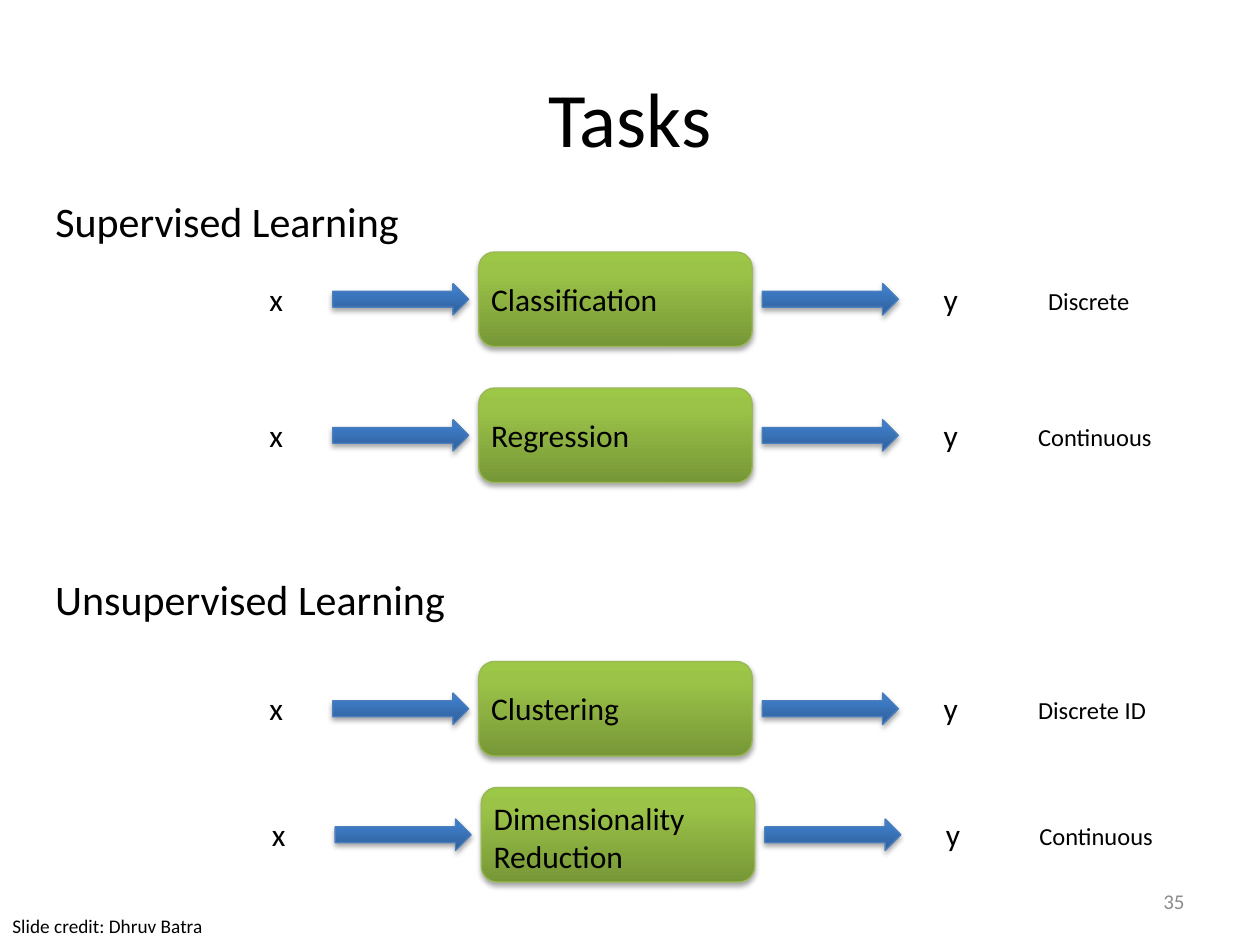
"""Build a slide of supervised and unsupervised learning tasks."""
from copy import deepcopy
from dataclasses import dataclass

from lxml import etree
from pptx import Presentation
from pptx import util as u
from pptx.dml.color import RGBColor
from pptx.enum import shapes, text
from pptx.oxml.ns import qn


@dataclass(frozen=True)
class Style:
    stops: tuple[tuple[float, str], ...]
    line: str


@dataclass(frozen=True)
class Task:
    name: str
    top: float
    output: str
    output_left: float
    output_width: float
    shift: float = 0
    label_drop: float = 0.17
    label_height: float = 0.4


@dataclass(frozen=True)
class Label:
    words: str
    left: float
    top: float
    width: float
    height: float
    size: int


GREEN = Style(((0, "779737"), (0.8, "9BC348"), (1, "9DC746")), "98B955")
BLUE = Style(((0, "2F5F99"), (0.8, "3D7CC7"), (1, "3A7CCB")), "4B7EBC")
ARROW = shapes.MSO_SHAPE.RIGHT_ARROW
ROUNDED = shapes.MSO_SHAPE.ROUNDED_RECTANGLE

TASKS = (
    Task("Classification", 2, "Discrete", 8.22, 0.92),
    Task("Regression", 3.08, "Continuous", 8.14, 1.2),
    Task("Clustering", 5.25, "Discrete ID", 8.14, 1.17),
    Task("Dimensionality\vReduction", 6.25, "Continuous", 8.15, 1.2,
         shift=0.02, label_drop=0.04, label_height=0.71),
)
LABELS = (
    Label("Supervised Learning", 0.34, 1.5, 3.29, 0.5, 24),
    Label("Unsupervised Learning", 0.34, 4.5, 3.66, 0.5, 24),
    Label("Slide credit: Dhruv Batra", 0, 7.21, 1.73, 0.29, 11),
)


def color(value: str) -> RGBColor:
    """Turn a hex string into a colour."""
    return RGBColor.from_string(value)


def inches(*lengths: float) -> list[u.Length]:
    """Turn numbers into lengths."""
    return [u.Inches(length) for length in lengths]


def set_all(target, values: dict) -> None:
    """Set each named attribute of the target."""
    for name, value in values.items():
        setattr(target, name, value)


def write(frame, words: str, size: int, align=text.PP_ALIGN.LEFT, ink: str = "000000") -> None:
    """Write one formatted paragraph into a text frame."""
    frame.text = words
    para = frame.paragraphs[0]
    para.alignment = align
    for span in para.runs:
        set_all(span.font, {"name": "Calibri", "size": u.Pt(size)})
        span.font.color.rgb = color(ink)


def add_label(page, label: Label, wrap: bool = False) -> None:
    """Add a text box that grows with its text."""
    box = page.shapes.add_textbox(*inches(label.left, label.top, label.width, label.height))
    set_all(box.text_frame, {"word_wrap": wrap,
                             "auto_size": text.MSO_AUTO_SIZE.SHAPE_TO_FIT_TEXT})
    write(box.text_frame, label.words, label.size)


def add_glossy(page, kind, place: tuple[float, float, float, float], style: Style) -> None:
    """Add a shape with a three-stop gradient and a soft shadow."""
    shape = page.shapes.add_shape(kind, *inches(*place))
    shape.fill.gradient()
    shape.fill.gradient_angle = 90
    properties = shape.element.spPr
    stop_list = properties.find(".//" + qn("a:gsLst"))
    stop_list.append(deepcopy(stop_list[0]))
    for stop, (position, value) in zip(shape.fill.gradient_stops, style.stops):
        stop.position = position
        stop.color.rgb = color(value)
    shape.line.color.rgb = color(style.line)
    shape.line.width = u.Pt(0.75)
    shape.shadow.inherit = False
    shadow = etree.SubElement(
        properties.find(qn("a:effectLst")), qn("a:outerShdw"),
        blurRad=str(u.Pt(3.1)), dist=str(u.Pt(1.8)), dir="5400000", rotWithShape="0")
    black = etree.SubElement(shadow, qn("a:srgbClr"), val="000000")
    etree.SubElement(black, qn("a:alpha"), val="35000")


def add_task(page, task: Task) -> None:
    """Draw one row from input through task to output."""
    top, shift = task.top, task.shift
    add_glossy(page, ROUNDED, (3.8 + shift, top, 2.17, 0.75), GREEN)
    add_label(page, Label(task.name, 3.8 + shift, top + task.label_drop,
                          2.17, task.label_height, 18), wrap=True)
    for left in (2.64, 6.05):
        add_glossy(page, ARROW, (left + shift, top + 0.25, 1.08, 0.25), BLUE)
    for words, left, width in (("x", 2.04, 0.33), ("y", 7.39, 0.34)):
        add_label(page, Label(words, left + shift, top + 0.17, width, 0.4, 18))
    add_label(page, Label(task.output, task.output_left, top + 0.22,
                          task.output_width, 0.34, 14))


def main() -> None:
    """Build and save the deck."""
    deck = Presentation()
    set_all(deck, {"slide_width": u.Inches(10), "slide_height": u.Inches(7.5)})
    page = deck.slides.add_slide(deck.slide_layouts[5])

    title = page.shapes.title
    set_all(title, dict(zip(("left", "top", "width", "height"), inches(0.5, 0.3, 9, 1.25))))
    title.text_frame.vertical_anchor = text.MSO_ANCHOR.MIDDLE
    write(title.text_frame, "Tasks", 44, text.PP_ALIGN.CENTER)

    number = page.shapes.add_textbox(*inches(7.17, 6.95, 2.33, 0.4))
    set_all(number.text_frame, {"word_wrap": True, "vertical_anchor": text.MSO_ANCHOR.MIDDLE})
    write(number.text_frame, "35", 12, text.PP_ALIGN.RIGHT, "8C8C8C")

    for task in TASKS:
        add_task(page, task)
    for label in LABELS:
        add_label(page, label)
    deck.save("out.pptx")


if __name__ == "__main__":
    main()
